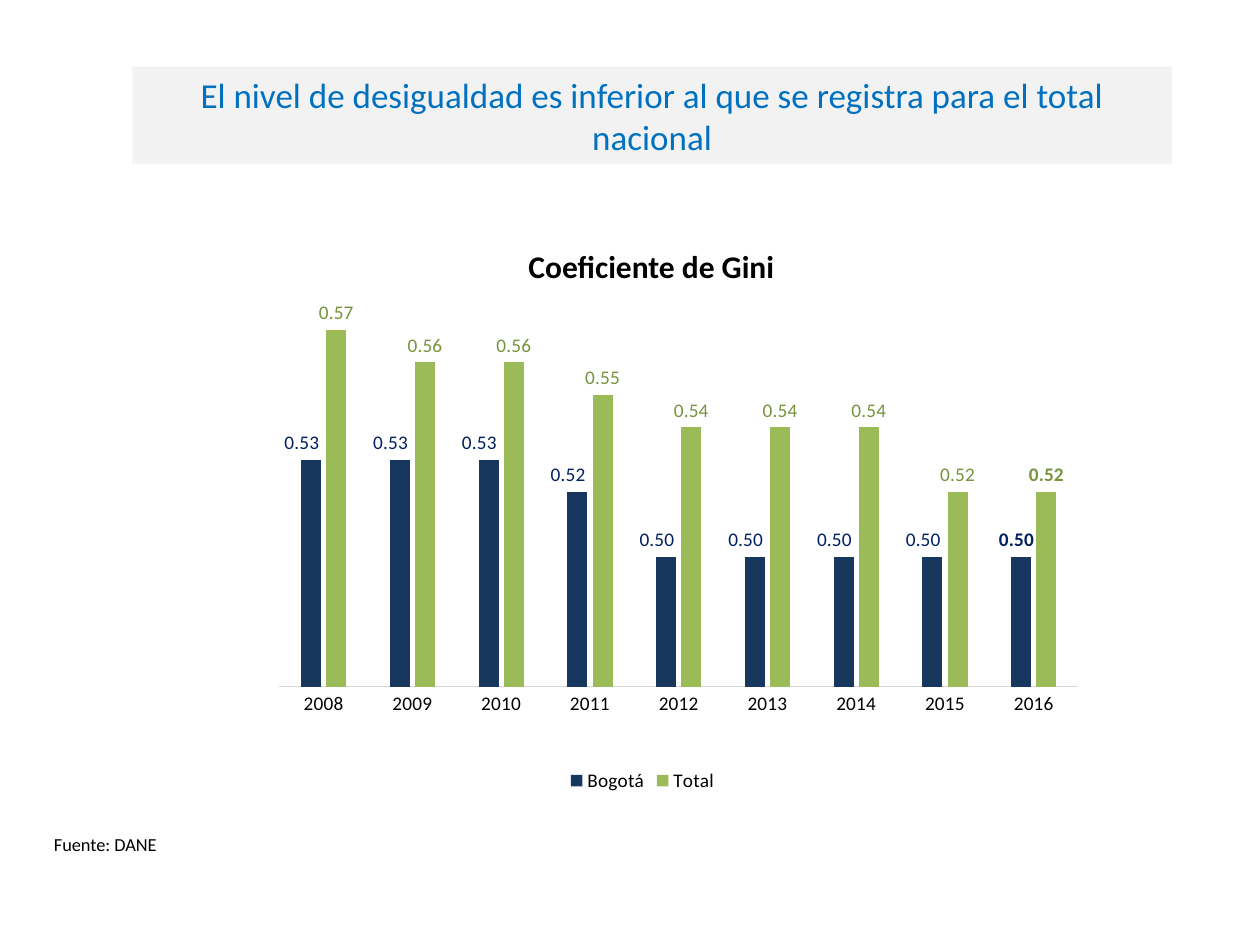
from dataclasses import dataclass

from lxml import etree
from pptx import Presentation
from pptx.chart.data import CategoryChartData
from pptx.dml.color import RGBColor
from pptx.enum import chart as ch, shapes, text
from pptx.oxml import ns
from pptx.util import Inches, Pt

FONT = "Calibri"
BLACK = RGBColor(0x00, 0x00, 0x00)
WHITE = RGBColor(0xFF, 0xFF, 0xFF)
PALE_GRAY = RGBColor(0xF2, 0xF2, 0xF2)
AXIS_GRAY = RGBColor(0xD9, 0xD9, 0xD9)
TITLE_BLUE = RGBColor(0x00, 0x70, 0xC0)
NAVY = RGBColor(0x17, 0x37, 0x5E)
NAVY_LABEL = RGBColor(0x00, 0x20, 0x60)
GREEN = RGBColor(0x9B, 0xBB, 0x59)
GREEN_LABEL = RGBColor(0x77, 0x93, 0x3C)
YEARS = [str(year) for year in range(2008, 2017)]
LABEL_SIZE = 11


@dataclass
class Box:
    content: str
    left: float
    top: float
    width: float
    height: float
    size: float
    color: RGBColor
    fill: RGBColor | None = None
    align: text.PP_ALIGN = text.PP_ALIGN.CENTER
    anchor: text.MSO_ANCHOR = text.MSO_ANCHOR.MIDDLE
    bold: bool = False


@dataclass
class GiniSeries:
    name: str
    values: list[float]
    fill: RGBColor
    label_color: RGBColor
    label_shift: float = 0


BOXES = [
    Box("Fuente: DANE", 0.33, 6.55, 1.22, 0.3, 10.5, BLACK, WHITE,
        text.PP_ALIGN.LEFT),
    Box("El nivel de desigualdad es inferior al que se registra para el total nacional",
        1.05, 0.53, 8.25, 0.77, 20, TITLE_BLUE, PALE_GRAY),
    Box("Coeficiente de Gini", 2.93, 1.91, 4.48, 0.4, 18, BLACK,
        anchor=text.MSO_ANCHOR.TOP, bold=True),
]
SERIES = [
    GiniSeries("Bogotá", [0.53, 0.53, 0.53, 0.52, 0.5, 0.5, 0.5, 0.5, 0.5],
               NAVY, NAVY_LABEL, -0.01),
    GiniSeries("Total", [0.57, 0.56, 0.56, 0.55, 0.54, 0.54, 0.54, 0.52, 0.52],
               GREEN, GREEN_LABEL),
]


def style_font(font, size: float, color: RGBColor, bold: bool = False) -> None:
    font.name = FONT
    font.size = Pt(size)
    font.bold = bold
    font.color.rgb = color


def add_box(s, box: Box) -> None:
    place = [Inches(v) for v in (box.left, box.top, box.width, box.height)]
    if box.fill is None:
        sp = s.shapes.add_textbox(*place)
    else:
        sp = s.shapes.add_shape(shapes.MSO_SHAPE.RECTANGLE, *place)
        sp.shadow.inherit = False
        sp.fill.solid()
        sp.fill.fore_color.rgb = box.fill
        sp.line.fill.background()
    tf = sp.text_frame
    tf.word_wrap = True
    tf.vertical_anchor = box.anchor
    tf.text = box.content
    p = tf.paragraphs[0]
    p.alignment = box.align
    style_font(p.runs[0].font, box.size, box.color, box.bold)


def manual_layout(**settings: str | float):
    layout = etree.Element(ns.qn("c:layout"))
    manual = etree.SubElement(layout, ns.qn("c:manualLayout"))
    for name, value in settings.items():
        etree.SubElement(manual, ns.qn(f"c:{name}")).set("val", str(value))
    return layout


def style_series(series, gini: GiniSeries) -> None:
    series.format.fill.solid()
    series.format.fill.fore_color.rgb = gini.fill
    series.invert_if_negative = False
    labels = series.data_labels
    labels.show_value = True
    labels.number_format = "0.00"
    labels.number_format_is_linked = False
    labels.position = ch.XL_LABEL_POSITION.OUTSIDE_END
    style_font(labels.font, LABEL_SIZE, gini.label_color)
    last = len(YEARS) - 1
    for i in range(len(YEARS)):
        if i == last or gini.label_shift:
            label = series.points[i].data_label
            style_font(label.font, LABEL_SIZE, gini.label_color, i == last)
            label.position = ch.XL_LABEL_POSITION.OUTSIDE_END
    if gini.label_shift:
        for idx in series._element.findall(".//" + ns.qn("c:dLbl") + "/" + ns.qn("c:idx")):
            shift = gini.label_shift / 2 if idx.get("val") == str(last) else gini.label_shift
            idx.addnext(manual_layout(x=shift, y=0))


def add_gini_chart(s) -> None:
    data = CategoryChartData(number_format="0.00")
    data.categories = YEARS
    for gini in SERIES:
        data.add_series(gini.name, gini.values)
    chart = s.shapes.add_chart(
        ch.XL_CHART_TYPE.COLUMN_CLUSTERED,
        Inches(1.46), Inches(2.13), Inches(7.28), Inches(4.2), data).chart
    style_font(chart.font, LABEL_SIZE, BLACK)
    chart.has_title = False
    chart.has_legend = True
    chart.legend.position = ch.XL_LEGEND_POSITION.BOTTOM
    chart.legend.include_in_layout = False
    style_font(chart.legend.font, LABEL_SIZE, BLACK)

    years = chart.category_axis
    years.major_tick_mark = ch.XL_TICK_MARK.NONE
    years.format.line.color.rgb = AXIS_GRAY
    years.format.line.width = Pt(0.75)
    style_font(years.tick_labels.font, LABEL_SIZE, BLACK)
    values = chart.value_axis
    values.visible = False
    values.has_major_gridlines = False
    values.minimum_scale = 0.46
    values.maximum_scale = 0.58

    plot = chart.plots[0]
    plot.vary_by_categories = False
    plot.gap_width = 219
    plot.overlap = -27
    for series, gini in zip(plot.series, SERIES):
        style_series(series, gini)

    area = chart._chartSpace.find(".//" + ns.qn("c:plotArea"))
    for old in area.findall(ns.qn("c:layout")):
        area.remove(old)
    area.insert(0, manual_layout(layoutTarget="inner", xMode="edge", yMode="edge",
                                 x=0.104, y=0.055, w=0.871, h=0.736))


def main() -> None:
    prs = Presentation()
    prs.slide_width, prs.slide_height = Inches(10), Inches(7.5)
    s = prs.slides.add_slide(prs.slide_layouts[6])
    for box in BOXES:
        add_box(s, box)
    add_gini_chart(s)
    prs.save("out.pptx")


if __name__ == "__main__":
    main()
